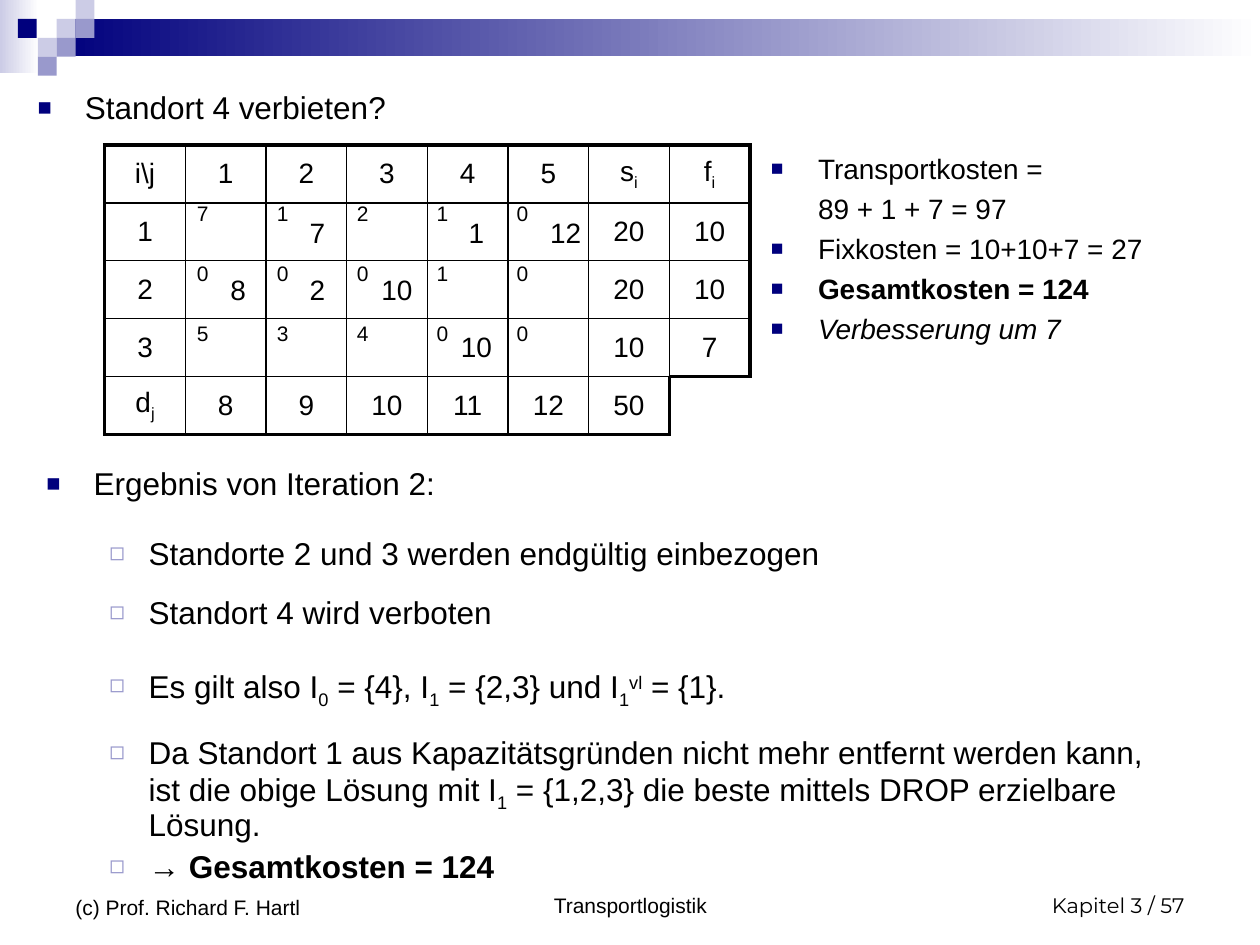
from lxml import etree
from pptx import Presentation
from pptx.dml.color import RGBColor
from pptx.enum.shapes import MSO_SHAPE
from pptx.enum.text import MSO_ANCHOR, PP_ALIGN
from pptx.oxml.ns import qn
from pptx.util import Pt

RECT = MSO_SHAPE.RECTANGLE
LEFT, CENTER, RIGHT = PP_ALIGN.LEFT, PP_ALIGN.CENTER, PP_ALIGN.RIGHT
TOP, MIDDLE, BOTTOM = MSO_ANCHOR.TOP, MSO_ANCHOR.MIDDLE, MSO_ANCHOR.BOTTOM
NAVY, LILAC, PALE, BLACK, WHITE = "00007D", "9999CC", "CCCCE6", "000000", "FFFFFF"
BASELINE = {"sub": "-25000", "sup": "30000"}
# level: left margin, first-line indent, line spacing, bullet, colour, size
LEVELS = {
    "main": (27, -27, 0.9, "■", NAVY, 75),
    "side": (27, -27, 1, "■", NAVY, 75),
    "more": (27, 0, 1, None, None, None),
    "sub": (58.5, -22.5, 0.9, "◻", LILAC, 80),
}


def rgb(value):
    return RGBColor.from_string(value)


def write(tf, paragraphs, size, align=LEFT, font="Arial"):
    """Each paragraph is (level, run, run, ...); a run is (text, style)."""
    for i, (level, *runs) in enumerate(paragraphs):
        p = tf.paragraphs[0] if i == 0 else tf.add_paragraph()
        p.alignment = align
        if i:
            p.space_before = Pt(round(size * 0.23, 1))
        if level:
            margin, indent, spacing, char, color, percent = LEVELS[level]
            p.line_spacing = spacing
            pPr = p._p.get_or_add_pPr()
            pPr.set("marL", str(Pt(margin)))
            pPr.set("indent", str(Pt(indent)))
            if char:
                clr = etree.SubElement(pPr, qn("a:buClr"))
                etree.SubElement(clr, qn("a:srgbClr"), val=color)
                etree.SubElement(pPr, qn("a:buSzPct"), val=str(percent * 1000))
                etree.SubElement(pPr, qn("a:buFont"), typeface="Arial")
                etree.SubElement(pPr, qn("a:buChar"), char=char)
        for text, style in runs:
            r = p.add_run()
            r.text = text
            r.font.size, r.font.name = Pt(size), font
            r.font.color.rgb = rgb(BLACK)
            r.font.bold, r.font.italic = style == "bold", style == "italic"
            if style in BASELINE:
                r._r.get_or_add_rPr().set("baseline", BASELINE[style])


prs = Presentation()
prs.slide_width, prs.slide_height = Pt(720), Pt(540)
s = prs.slides.add_slide(prs.slide_layouts[6])

# Header band: gradients first, then the small squares
header = [
    (0, 0, 22.3, 41.8, PALE, WHITE),
    (32.4, 10.8, 687.6, 21.4, NAVY, WHITE),
]
header += [(x, y, 10.8, 10.8, color, None) for x, y, color in (
    (32.4, 10.8, PALE), (43.2, 0, PALE), (43.2, 10.8, LILAC), (21.6, 21.6, PALE),
    (10.2, 10.8, NAVY), (32.4, 21.6, LILAC), (21.6, 32.4, LILAC))]
for x, y, w, h, color, fade in header:
    sp = s.shapes.add_shape(RECT, Pt(x), Pt(y), Pt(w), Pt(h))
    sp.shadow.inherit = False
    sp.line.fill.background()
    if fade:
        sp.fill.gradient()
        sp.fill.gradient_angle = 0
        for stop, position, value in zip(sp.fill.gradient_stops, (0, 1), (color, fade)):
            stop.position, stop.color.rgb = position, rgb(value)
    else:
        sp.fill.solid()
        sp.fill.fore_color.rgb = rgb(color)

# Footer
for x, w, h, align, font, text in (
    (246.2, 228.2, 36, CENTER, "Arial", "Transportlogistik"),
    (516.2, 167.8, 36, RIGHT, "Montserrat", "Kapitel 3 / 57"),
    (36, 167.8, 37.4, LEFT, "Arial", "(c) Prof. Richard F. Hartl"),
):
    tf = s.shapes.add_textbox(Pt(x), Pt(491.8), Pt(w), Pt(h)).text_frame
    tf.word_wrap, tf.vertical_anchor = True, BOTTOM
    write(tf, [(None, (text, ""))], 12, align, font)

# Transport table; "_" starts a subscript
rows = [
    ["i\\j", "1", "2", "3", "4", "5", "s_i", "f_i"],
    ["1", "", "", "", "", "", "20", "10"],
    ["2", "", "", "", "", "", "20", "10"],
    ["3", "", "", "", "", "", "10", "7"],
    ["d_j", "8", "9", "10", "11", "12", "50", ""],
]
n_rows, n_cols = len(rows), len(rows[0])
used = {(i, j) for i in range(n_rows) for j in range(n_cols)} - {(n_rows - 1, n_cols - 1)}
table = s.shapes.add_table(n_rows, n_cols, Pt(59.8), Pt(82.8), Pt(368.8), Pt(165.5)).table
table.first_row = table.horz_banding = False
for col in table.columns:
    col.width = Pt(46.1)
for row in table.rows:
    row.height = Pt(33.1)
for i, row in enumerate(rows):
    for j, text in enumerate(row):
        cell = table.cell(i, j)
        cell.vertical_anchor = MIDDLE
        cell.fill.background()
        if text:
            base, _, index = text.partition("_")
            runs = [(base, "")] + ([(index, "sub")] if index else [])
            write(cell.text_frame, [(None, *runs)], 16, CENTER)
        # Thick line wherever the used area ends, thin line inside it
        tcPr = cell._tc.get_or_add_tcPr()
        sides = (("L", 0, -1), ("R", 0, 1), ("T", -1, 0), ("B", 1, 0))
        for k, (side, di, dj) in enumerate(sides):
            here, there = (i, j) in used, (i + di, j + dj) in used
            ln = etree.Element(qn("a:ln" + side), w=str(Pt(1 if here == there else 2.25)))
            if here or there:
                fill = etree.SubElement(ln, qn("a:solidFill"))
                etree.SubElement(fill, qn("a:srgbClr"), val=BLACK)
            else:
                etree.SubElement(ln, qn("a:noFill"))
            tcPr.insert(k, ln)

# Unit costs in the cell corners
for i, costs in enumerate(("71210", "00010", "53400")):
    for j, cost in enumerate(costs):
        sp = s.shapes.add_textbox(Pt(105.4 + 45.7 * j), Pt(111 + 34.2 * i), Pt(18.7), Pt(21.6))
        sp.text_frame.word_wrap = False
        write(sp.text_frame, [(None, (cost, ""))], 12, CENTER)

# Shipped amounts: top, height, top inset, {left: amount}
for y, h, inset, amounts in (
    (122.4, 23.8, 0.7, {167: "7", 257.8: "1", 308.9: "12"}),
    (151.2, 27.4, 4.3, {121.7: "8", 167: "2", 212.4: "10"}),
    (185, 26.6, 3.6, {257.8: "10"}),
):
    for x, amount in amounts.items():
        tf = s.shapes.add_textbox(Pt(x), Pt(y), Pt(28.8), Pt(h)).text_frame
        tf.word_wrap = True
        tf.margin_left = tf.margin_right = Pt(4.3)
        tf.margin_top = Pt(inset)
        write(tf, [(None, (amount, ""))], 16, CENTER)

# Bulleted texts: left, top, width, height, size, paragraphs
for x, y, w, h, size, paragraphs in (
    (14.4, 49, 648, 28, 18, [("main", ("Standort 4 verbieten?", ""))]),
    (433.4, 82.8, 263.5, 124.6, 16, [
        ("side", ("Transportkosten =", "")),
        ("more", ("89 + 1 + 7 = 97", "")),
        ("side", ("Fixkosten = 10+10+7 = 27", "")),
        ("side", ("Gesamtkosten = 124", "bold")),
        ("side", ("Verbesserung um 7", "italic"))]),
    (19.4, 264.2, 648, 28, 18, [("main", ("Ergebnis von Iteration 2:", ""))]),
    (19.4, 303.8, 648, 23, 18, [
        ("sub", ("Standorte 2 und 3 werden endgültig einbezogen", ""))]),
    (19.4, 337.7, 648, 23, 18, [("sub", ("Standort 4 wird verboten", ""))]),
    (19.4, 378, 648, 28, 18, [
        ("sub", ("Es gilt also I", ""), ("0", "sub"), (" = {4}, I", ""), ("1", "sub"),
         (" = {2,3} und I", ""), ("1", "sub"), ("vl", "sup"), (" = {1}.", ""))]),
    (19.4, 417.6, 648, 90.7, 18, [
        ("sub", ("Da Standort 1 aus Kapazitätsgründen nicht mehr entfernt werden kann, "
                 "ist die obige Lösung mit I", ""), ("1", "sub"),
         (" = {1,2,3} die beste mittels DROP erzielbare Lösung.", "")),
        ("sub", ("→ ", ""), ("Gesamtkosten = 124", "bold"))]),
):
    tf = s.shapes.add_textbox(Pt(x), Pt(y), Pt(w), Pt(h)).text_frame
    tf.word_wrap, tf.vertical_anchor = True, TOP
    write(tf, paragraphs, size)

prs.save("out.pptx")
